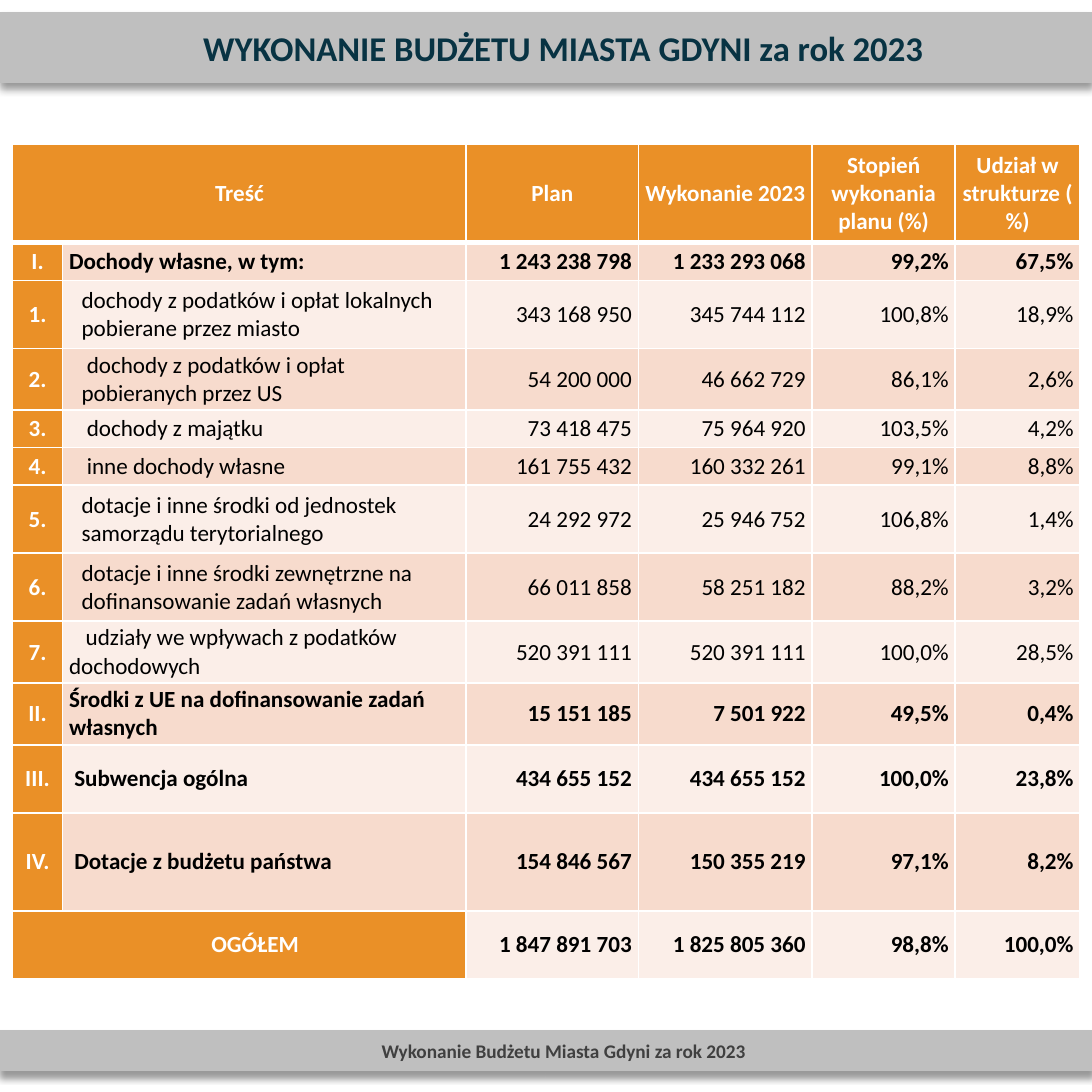
from lxml import etree
from pptx import Presentation
from pptx.dml.color import RGBColor
from pptx.enum.shapes import MSO_SHAPE
from pptx.enum.text import MSO_ANCHOR, PP_ALIGN
from pptx.oxml.ns import qn
from pptx.util import Pt

RECT = MSO_SHAPE.RECTANGLE
MIDDLE = MSO_ANCHOR.MIDDLE
LEFT, CENTER, RIGHT = PP_ALIGN.LEFT, PP_ALIGN.CENTER, PP_ALIGN.RIGHT

WHITE = RGBColor(0xFF, 0xFF, 0xFF)
BLACK = RGBColor(0x00, 0x00, 0x00)
GREY = RGBColor(0xBF, 0xBF, 0xBF)
DARK_GREY = RGBColor(0x40, 0x40, 0x40)
NAVY = RGBColor(0x08, 0x33, 0x43)
ORANGE = RGBColor(0xEA, 0x90, 0x27)
PEACH = RGBColor(0xF7, 0xDB, 0xCD)
CREAM = RGBColor(0xFB, 0xEE, 0xE8)

SIDE = 566.64
COL_WIDTHS = [26, 209.5, 89.3, 90.2, 74.2, 64.8]
ONE_LINE, TWO_LINES, MEDIUM, TALL = 19.5, 32, 35.3, 51
HEADERS = ["Treść", "Plan", "Wykonanie 2023",
           "Stopień wykonania planu (%)", "Udział w strukturze ( %)"]
FLUSH, NUDGED = (0, 0), (0, 2.7)
INDENTED, INDENTED_NUDGED = (6.5, 0), (6.5, 2.7)
FIRST_LINE = (0, 8.6)
BUDGET = [
    (ONE_LINE, True, FLUSH, "I.", "Dochody własne, w tym:",
     "1 243 238 798", "1 233 293 068", "99,2%", "67,5%"),
    (MEDIUM, False, INDENTED, "1.", "dochody z podatków i opłat lokalnych pobierane przez miasto",
     "343 168 950", "345 744 112", "100,8%", "18,9%"),
    (TWO_LINES, False, INDENTED_NUDGED, "2.", "dochody z podatków i opłat pobieranych przez US",
     "54 200 000", "46 662 729", "86,1%", "2,6%"),
    (ONE_LINE, False, INDENTED_NUDGED, "3.", "dochody z majątku",
     "73 418 475", "75 964 920", "103,5%", "4,2%"),
    (ONE_LINE, False, INDENTED_NUDGED, "4.", "inne dochody własne",
     "161 755 432", "160 332 261", "99,1%", "8,8%"),
    (MEDIUM, False, INDENTED, "5.", "dotacje i inne środki od jednostek samorządu terytorialnego",
     "24 292 972", "25 946 752", "106,8%", "1,4%"),
    (MEDIUM, False, INDENTED, "6.", "dotacje i inne środki zewnętrzne na dofinansowanie zadań własnych",
     "66 011 858", "58 251 182", "88,2%", "3,2%"),
    (TWO_LINES, False, FIRST_LINE, "7.", "udziały we wpływach z podatków dochodowych",
     "520 391 111", "520 391 111", "100,0%", "28,5%"),
    (TWO_LINES, True, FLUSH, "II.", "Środki z UE na dofinansowanie zadań własnych",
     "15 151 185", "7 501 922", "49,5%", "0,4%"),
    (MEDIUM, True, NUDGED, "III.", "Subwencja ogólna",
     "434 655 152", "434 655 152", "100,0%", "23,8%"),
    (TALL, True, NUDGED, "IV.", "Dotacje z budżetu państwa",
     "154 846 567", "150 355 219", "97,1%", "8,2%"),
]
TOTALS = ["1 847 891 703", "1 825 805 360", "98,8%", "100,0%"]


def write_text(tf, text, size=12, color=BLACK, bold=False, align=LEFT, indent=FLUSH):
    """Write one formatted paragraph into a text frame."""
    p = tf.paragraphs[0]
    p.alignment = align
    pPr = p._p.get_or_add_pPr()
    pPr.set("marL", str(int(Pt(indent[0]))))
    pPr.set("indent", str(int(Pt(indent[1]))))
    r = p.add_run()
    r.text = text
    r.font.name = "Calibri"
    r.font.size = Pt(size)
    r.font.bold = bold
    r.font.color.rgb = color


class BudgetSlide:
    """Draw the bands and table cells of the budget slide."""

    def __init__(self, s):
        self.s = s

    def band(self, top, height, text, **style):
        """Add a full-width grey band with a soft shadow."""
        sp = self.s.shapes.add_shape(RECT, Pt(0), Pt(top), Pt(SIDE), Pt(height))
        sp.fill.solid()
        sp.fill.fore_color.rgb = GREY
        sp.line.color.rgb = GREY
        sp.line.width = Pt(1)
        sp.shadow.inherit = False
        effects = sp._element.spPr.find(qn("a:effectLst"))
        shadow = etree.SubElement(effects, qn("a:outerShdw"), blurRad=str(int(Pt(4))),
                                  dist=str(int(Pt(3))), dir="5400000", rotWithShape="0")
        color = etree.SubElement(shadow, qn("a:srgbClr"), val=str(BLACK))
        etree.SubElement(color, qn("a:alpha"), val="40000")
        tf = sp.text_frame
        tf.word_wrap = True
        tf.vertical_anchor = MIDDLE
        tf.margin_left = Pt(25.2)
        write_text(tf, text, bold=True, align=CENTER, **style)

    def table(self, left, top, heights):
        """Add an empty table with the given row heights."""
        frame = self.s.shapes.add_table(len(heights), len(COL_WIDTHS), Pt(left), Pt(top),
                                        Pt(sum(COL_WIDTHS)), Pt(sum(heights)))
        table = frame.table
        table.first_row = table.horz_banding = False
        for column, width in zip(table.columns, COL_WIDTHS):
            column.width = Pt(width)
        for row, height in zip(table.rows, heights):
            row.height = Pt(height)
        return table

    def cell(self, cell, fill, text="", top=1, bottom=1, **style):
        """Fill, border and write one table cell."""
        tcPr = cell._tc.get_or_add_tcPr()
        for side, width in zip("LRTB", (1, 1, top, bottom)):
            ln = etree.SubElement(tcPr, qn(f"a:ln{side}"), w=str(int(Pt(width))))
            paint = etree.SubElement(ln, qn("a:solidFill"))
            etree.SubElement(paint, qn("a:srgbClr"), val=str(WHITE))
        cell.fill.solid()
        cell.fill.fore_color.rgb = fill
        cell.vertical_anchor = MIDDLE
        cell.margin_left = cell.margin_right = Pt(3.4)
        cell.margin_top = cell.margin_bottom = Pt(1.4)
        if text:
            write_text(cell.text_frame, text, **style)


def main():
    """Build the budget slide and save it."""
    prs = Presentation()
    prs.slide_width = prs.slide_height = Pt(SIDE)
    slide = BudgetSlide(prs.slides.add_slide(prs.slide_layouts[6]))
    slide.band(535, 20.2, "Wykonanie Budżetu Miasta Gdyni za rok 2023", size=10, color=DARK_GREY)
    slide.band(6.5, 36, "WYKONANIE BUDŻETU MIASTA GDYNI za rok 2023", size=18, color=NAVY)

    heights = [TALL] + [row[0] for row in BUDGET] + [MEDIUM]
    table = slide.table(6.5, 75, heights)
    last = len(heights) - 1
    label = dict(color=WHITE, bold=True, align=CENTER)

    for row in (0, last):
        table.cell(row, 0).merge(table.cell(row, 1))
    for col, text in enumerate([HEADERS[0], ""] + HEADERS[1:]):
        slide.cell(table.cell(0, col), ORANGE, text, bottom=3, **label)

    for row, (_, bold, indent, number, name, *values) in enumerate(BUDGET, 1):
        fill = PEACH if row % 2 else CREAM
        top = 3 if row == 1 else 1
        slide.cell(table.cell(row, 0), ORANGE, number, top=top, **label)
        slide.cell(table.cell(row, 1), fill, name, top=top, bold=bold, indent=indent)
        for col, value in enumerate(values, 2):
            slide.cell(table.cell(row, col), fill, value, top=top, bold=bold, align=RIGHT)

    slide.cell(table.cell(last, 0), ORANGE, "OGÓŁEM", indent=(16.3, 0), **label)
    slide.cell(table.cell(last, 1), ORANGE)
    for col, value in enumerate(TOTALS, 2):
        slide.cell(table.cell(last, col), CREAM, value, bold=True, align=RIGHT)
    prs.save("out.pptx")


if __name__ == "__main__":
    main()
